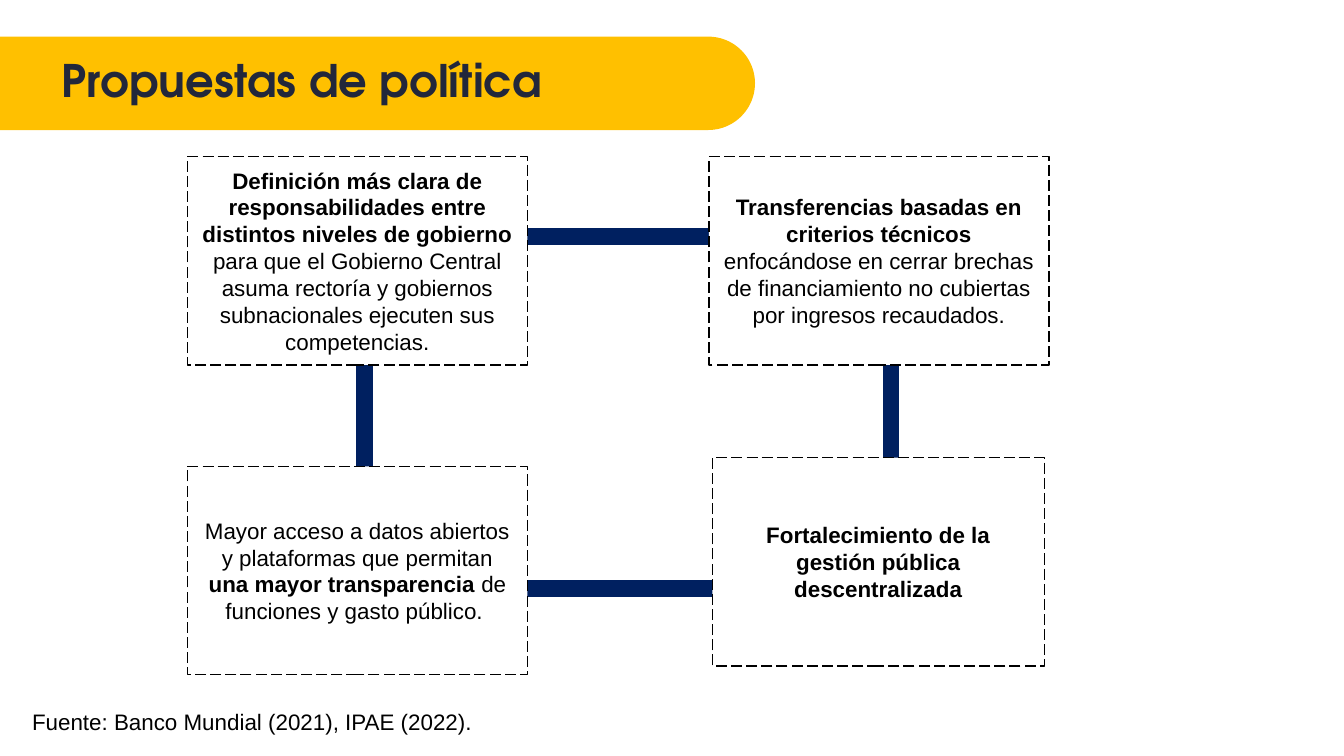
from typing import NamedTuple

from pptx import Presentation
from pptx.dml.color import RGBColor
from pptx.enum.dml import MSO_LINE
from pptx.enum.shapes import MSO_SHAPE
from pptx.enum.text import MSO_ANCHOR, PP_ALIGN
from pptx.util import Emu, Pt

PX = 4572  # 200 px to the inch

NAVY = RGBColor(0x00, 0x20, 0x60)
YELLOW = RGBColor(0xFF, 0xC0, 0x00)
INK = RGBColor(0x22, 0x27, 0x3B)
BLACK = RGBColor(0x00, 0x00, 0x00)
WHITE = RGBColor(0xFF, 0xFF, 0xFF)

BODY_FONT = {"name": "Arial", "size": Pt(12)}
TITLE_FONT = {"name": "TeX Gyre Adventor", "size": Pt(24), "bold": True}


class Box(NamedTuple):
    left: int
    top: int
    width: int
    height: int


class Run(NamedTuple):
    text: str
    bold: bool = False


class Proposal(NamedTuple):
    box: Box
    runs: list[Run]


PROPOSALS = [
    Proposal(Box(1055, 233, 506, 310), [
        Run("Transferencias basadas en criterios técnicos", True),
        Run(" enfocándose en cerrar brechas de financiamiento no cubiertas por "
            "ingresos recaudados."),
    ]),
    Proposal(Box(1060, 681, 494, 310), [
        Run("Fortalecimiento de la gestión pública descentralizada", True),
    ]),
    Proposal(Box(279, 694, 506, 310), [
        Run("Mayor acceso a datos abiertos y plataformas que permitan "),
        Run("una mayor transparencia", True),
        Run(" de funciones y gasto público. "),
    ]),
    Proposal(Box(279, 233, 506, 310), [
        Run("Definición más clara de responsabilidades entre distintos niveles de gobierno", True),
        Run(" para que el Gobierno Central asuma rectoría y gobiernos subnacionales "
            "ejecuten sus competencias."),
    ]),
]


def emu(box: Box) -> list[Emu]:
    return [Emu(length * PX) for length in box]


def set_margins(frame, across: int, down: int) -> None:
    margins = {"margin_left": across, "margin_right": across,
               "margin_top": down, "margin_bottom": down}
    for side, length in margins.items():
        setattr(frame, side, Emu(length * PX))


def write(paragraph, runs: list[Run], font: dict, color: RGBColor) -> None:
    for part in runs:
        run = paragraph.add_run()
        run.text = part.text
        for attribute, value in ({"bold": part.bold} | font).items():
            setattr(run.font, attribute, value)
        run.font.color.rgb = color


def add_plain_shape(slide, kind: MSO_SHAPE, box: Box):
    shape = slide.shapes.add_shape(kind, *emu(box))
    shape.shadow.inherit = False
    return shape


def add_frame(slide, box: Box) -> None:
    frame = add_plain_shape(slide, MSO_SHAPE.RECTANGLE, box)
    frame.fill.background()
    frame.line.color.rgb = NAVY
    frame.line.width = Pt(9)


def add_banner(slide, box: Box) -> None:
    banner = add_plain_shape(slide, MSO_SHAPE.ROUND_2_SAME_RECTANGLE, box)
    banner.rotation = 90
    banner.adjustments[0] = 0.5
    banner.adjustments[1] = 0
    banner.fill.solid()
    banner.fill.fore_color.rgb = YELLOW
    banner.line.fill.background()


def place_title(slide, box: Box, text: str) -> None:
    title = slide.shapes.title
    title.left, title.top, title.width, title.height = emu(box)
    slide.shapes._spTree.append(title._element)  # in front of the banner
    frame = title.text_frame
    frame.word_wrap = True
    frame.vertical_anchor = MSO_ANCHOR.MIDDLE
    set_margins(frame, 20, 10)
    heading = frame.paragraphs[0]
    heading.alignment = PP_ALIGN.LEFT
    heading.line_spacing = 0.9
    write(heading, [Run(text)], TITLE_FONT, INK)


def add_proposal(slide, proposal: Proposal) -> None:
    card = add_plain_shape(slide, MSO_SHAPE.RECTANGLE, proposal.box)
    card.fill.solid()
    card.fill.fore_color.rgb = WHITE
    card.line.color.rgb = BLACK
    card.line.width = Pt(0.75)
    card.line.dash_style = MSO_LINE.LONG_DASH
    frame = card.text_frame
    frame.word_wrap = True
    frame.vertical_anchor = MSO_ANCHOR.MIDDLE
    set_margins(frame, 20, 20)
    frame.paragraphs[0].alignment = PP_ALIGN.CENTER
    write(frame.paragraphs[0], proposal.runs, BODY_FONT, BLACK)


def add_citation(slide, box: Box, text: str) -> None:
    frame = slide.shapes.add_textbox(*emu(box)).text_frame
    frame.word_wrap = True
    set_margins(frame, 20, 20)
    write(frame.paragraphs[0], [Run(text)], BODY_FONT, BLACK)


def main() -> None:
    deck = Presentation()
    deck.slide_width, deck.slide_height = Emu(2000 * PX), Emu(1125 * PX)
    slide = deck.slides.add_slide(deck.slide_layouts[5])

    # Frame that links the four proposals
    add_frame(slide, Box(542, 352, 784, 524))

    # Title on its banner
    add_banner(slide, Box(492, -438, 139, 1124))
    place_title(slide, Box(72, 14, 1570, 220), "Propuestas de política")

    # Proposals
    for proposal in PROPOSALS:
        add_proposal(slide, proposal)

    # Source line
    add_citation(slide, Box(28, 1034, 1008, 80), "Fuente: Banco Mundial (2021), IPAE (2022).")

    deck.save("out.pptx")


if __name__ == "__main__":
    main()
